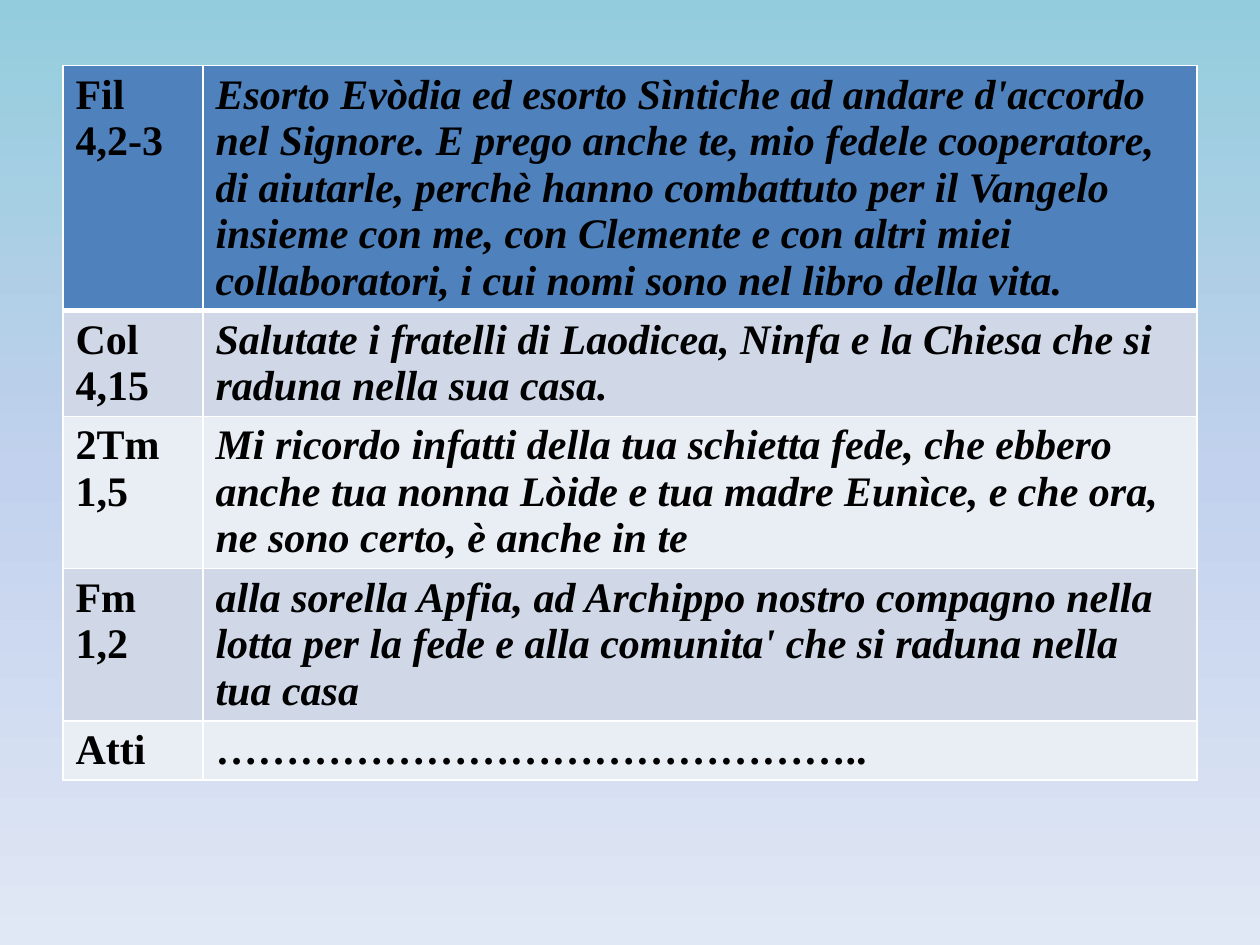
from copy import deepcopy
from dataclasses import dataclass

from lxml.etree import SubElement
from pptx import Presentation
from pptx.dml.color import RGBColor as RGB
from pptx.oxml.ns import qn
from pptx.util import Pt


@dataclass(frozen=True)
class Theme:
    """Colours, font and sizes of the slide."""
    sky: tuple = ("93CDDD", "C2D1ED", "E1E8F5")
    header: str = "4F81BD"
    bands: tuple = ("D0D8E8", "E9EDF4")
    rule: str = "FFFFFF"
    ink: str = "000000"
    font: str = "Times New Roman"
    size: float = 24
    thin: float = 1
    thick: float = 3


THEME = Theme()
COLUMNS = (80, 568)
VERSES = (
    ("Fil 4,2-3", "Esorto Evòdia ed esorto Sìntiche ad andare d'accordo nel Signore. "
     "E prego anche te, mio fedele cooperatore, di aiutarle, perchè hanno combattuto "
     "per il Vangelo insieme con me, con Clemente e con altri miei collaboratori, "
     "i cui nomi sono nel libro della vita.", 139.5, True),
    ("Col 4,15", "Salutate i fratelli di Laodicea, Ninfa e la Chiesa che si raduna "
     "nella sua casa.", 60.5, True),
    ("2Tm 1,5", "Mi ricordo infatti della tua schietta fede, che ebbero anche tua nonna "
     "Lòide e tua madre Eunìce, e che ora, ne sono certo, è anche in te", 87, True),
    ("Fm 1,2", "alla sorella Apfia, ad Archippo nostro compagno nella lotta per la fede "
     "e alla comunita' che si raduna nella tua casa", 87, True),
    ("Atti", "………………………………………..", 33.5, False),
)


def paint_sky(slide):
    """Fill the background with an even top-to-bottom gradient."""
    fill = slide.background.fill
    fill.gradient()
    fill.gradient_angle = 270
    stop_list = next(slide.element.iter(qn("a:gsLst")))
    stop_list.insert(1, deepcopy(stop_list[0]))
    for index, (stop, colour) in enumerate(zip(fill.gradient_stops, THEME.sky)):
        stop.position = index / (len(THEME.sky) - 1)
        stop.color.rgb = RGB.from_string(colour)


def write(frame, text, *, italic=False, bold=True):
    """Put formatted text in a text frame."""
    run = frame.paragraphs[0].add_run()
    run.text = text
    font = run.font
    font.name, font.size = THEME.font, Pt(THEME.size)
    font.bold, font.italic = bold, italic
    font.color.rgb = RGB.from_string(THEME.ink)


def rule_cell(cell, **widths):
    """Draw the four borders of a cell, thin unless a width is given."""
    properties = cell._tc.get_or_add_tcPr()
    for side in "LRTB":
        width = Pt(widths.get(side, THEME.thin))
        line = SubElement(properties, qn(f"a:ln{side}"), w=str(width))
        SubElement(SubElement(line, qn("a:solidFill")), qn("a:srgbClr"), val=THEME.rule)


def add_verses(slide, left, top, width, height):
    """Place the table of references and verses in the given box."""
    table = slide.shapes.add_table(len(VERSES), len(COLUMNS), Pt(left), Pt(top),
                                   Pt(width), Pt(height)).table
    for column, share in zip(table.columns, COLUMNS):
        column.width = Pt(width * share / sum(COLUMNS))
    row_total = sum(verse[2] for verse in VERSES)
    for index, (reference, verse, share, italic) in enumerate(VERSES):
        table.rows[index].height = Pt(height * share / row_total)
        colour = THEME.bands[(index - 1) % 2] if index else THEME.header
        heavy = {0: {"B": THEME.thick}, 1: {"T": THEME.thick}}.get(index, {})
        for cell, text, slanted in zip(table.rows[index].cells, (reference, verse),
                                       (False, italic)):
            rule_cell(cell, **heavy)
            cell.fill.solid()
            cell.fill.fore_color.rgb = RGB.from_string(colour)
            write(cell.text_frame, text, italic=slanted)


def main():
    """Build and save the slide."""
    deck = Presentation()
    deck.slide_width, deck.slide_height = Pt(720), Pt(540)
    slide = deck.slides.add_slide(deck.slide_layouts[6])
    paint_sky(slide)
    add_verses(slide, 36, 37.5, 648, 407.5)
    deck.save("out.pptx")


if __name__ == "__main__":
    main()
